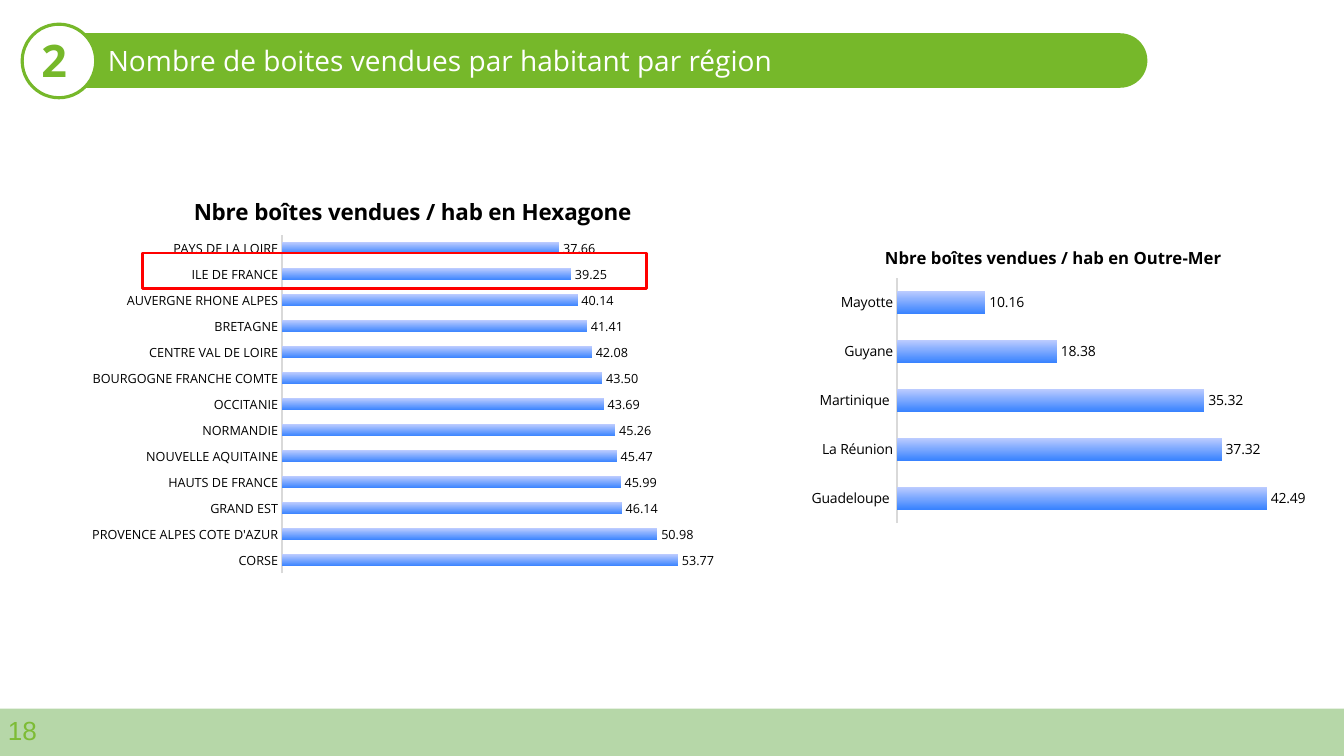
import pptx
import pptx.util
import pptx.dml.color
import pptx.chart.data
import pptx.enum.chart
import pptx.enum.shapes
import pptx.enum.text
import pptx.oxml
import pptx.oxml.ns

RGB = pptx.dml.color.RGBColor
GREEN = RGB(0x76, 0xB8, 0x2A)
PALE = RGB(0xB6, 0xD7, 0xA8)
LIME = RGB(0x7D, 0xBC, 0x35)
WHITE = RGB(0xFF, 0xFF, 0xFF)
BLACK = RGB(0, 0, 0)
GREY = RGB(0xD9, 0xD9, 0xD9)
RED = RGB(0xFF, 0, 0)
BLUE = RGB(0x37, 0x82, 0xFF)
SKY = RGB(0xBB, 0xCB, 0xFF)
FONT = "Open Sans"
PX = 9144
KIND = pptx.enum.shapes.MSO_SHAPE
ANCHOR = pptx.enum.text.MSO_ANCHOR

MAINLAND = [
    ("CORSE", 53.77), ("PROVENCE ALPES COTE D'AZUR", 50.98),
    ("GRAND EST", 46.14), ("HAUTS DE FRANCE", 45.99),
    ("NOUVELLE AQUITAINE", 45.47), ("NORMANDIE", 45.26),
    ("OCCITANIE", 43.69), ("BOURGOGNE FRANCHE COMTE", 43.5),
    ("CENTRE VAL DE LOIRE", 42.08), ("BRETAGNE", 41.41),
    ("AUVERGNE RHONE ALPES", 40.14), ("ILE DE FRANCE", 39.25),
    ("PAYS DE LA LOIRE", 37.66),
]
OVERSEAS = [
    ("Guadeloupe ", 42.49), ("La Réunion", 37.32),
    ("Martinique ", 35.32), ("Guyane", 18.38), ("Mayotte", 10.16),
]


def scale(*box):
    return [round(n * PX) for n in box]


def style(font, size, color, bold=False, name=FONT):
    font.size = pptx.util.Pt(size)
    font.color.rgb = color
    font.bold = bold
    font.name = name


def shape(slide, kind, box, fill=None, line=None, width=0):
    item = slide.shapes.add_shape(kind, *scale(*box))
    item.shadow.inherit = False
    if fill is None:
        item.fill.background()
    else:
        item.fill.solid()
        item.fill.fore_color.rgb = fill
    if line is None:
        item.line.fill.background()
    else:
        item.line.color.rgb = line
        item.line.width = pptx.util.Pt(width)
    return item


def label(slide, box, text, size, color, inset=13, bold=False,
          name=FONT, anchor=ANCHOR.TOP):
    frame = slide.shapes.add_textbox(*scale(*box)).text_frame
    frame.word_wrap = True
    frame.vertical_anchor = anchor
    if inset:
        frame.margin_left = frame.margin_right = inset * PX
        frame.margin_top = frame.margin_bottom = inset * PX
    para = frame.paragraphs[0]
    para.text = text
    style(para.font, size, color, bold, name)


def header(slide, left, top, number, title):
    bar = shape(slide, KIND.ROUNDED_RECTANGLE,
                (left + 18, top + 10, 1097, 52), GREEN, GREEN, 1.5)
    bar.adjustments[0] = 0.5
    shape(slide, KIND.OVAL, (left, top, 73, 73), WHITE, GREEN, 2.25)
    label(slide, (left + 6, top - 5, 81, 71), number, 32, GREEN, bold=True)
    label(slide, (left + 72, top + 10, 1064, 52), title, 20, WHITE,
          anchor=ANCHOR.MIDDLE)


def footer(slide, left, top, width, page):
    shape(slide, KIND.RECTANGLE, (left, top, width, 47), PALE)
    label(slide, (left - 2, top + 1, 57, 43), page, 18.7, LIME,
          inset=0, name="Arial")


def place(node, index, **parts):
    for old in node.findall(pptx.oxml.ns.qn("c:layout")):
        node.remove(old)
    body = "".join(f'<c:{key} val="{val}"/>' for key, val in parts.items())
    node.insert(index, pptx.oxml.parse_xml(
        f'<c:layout {pptx.oxml.ns.nsdecls("c")}>'
        f'<c:manualLayout>{body}</c:manualLayout></c:layout>'))


def bars(slide, box, title, rows, top, sizes, form, head, plot):
    big, small = sizes
    data = pptx.chart.data.CategoryChartData()
    data.categories = [name for name, value in rows]
    data.add_series("Series 1", [value for name, value in rows])
    chart = slide.shapes.add_chart(
        pptx.enum.chart.XL_CHART_TYPE.BAR_CLUSTERED, *scale(*box), data).chart
    style(chart.font, 10, BLACK)
    chart.has_legend = False
    chart.has_title = True
    para = chart.chart_title.text_frame.paragraphs[0]
    para.text = title
    style(para.font, big, BLACK, True)

    axis = chart.category_axis
    axis.major_tick_mark = pptx.enum.chart.XL_TICK_MARK.NONE
    axis.format.line.color.rgb = GREY
    axis.format.line.width = pptx.util.Pt(1)
    style(axis.tick_labels.font, small, BLACK)
    scope = chart.value_axis
    scope.has_major_gridlines = False
    scope.minimum_scale, scope.maximum_scale = 0, top
    scope.tick_labels.number_format = form
    scope.tick_labels.number_format_is_linked = False
    scope.visible = False

    group = chart.plots[0]
    group.vary_by_categories = False
    group.gap_width, group.overlap = 115, -20
    fill = group.series[0].format.fill
    fill.gradient()
    fill.gradient_angle = 90
    for stop, color in zip(fill.gradient_stops, (BLUE, SKY)):
        stop.color.rgb = color
    group.has_data_labels = True
    marks = group.data_labels
    marks.show_value = True
    marks.position = pptx.enum.chart.XL_LABEL_POSITION.OUTSIDE_END
    marks.number_format = form
    marks.number_format_is_linked = False
    style(marks.font, small, BLACK)

    qn = pptx.oxml.ns.qn
    root = chart.element.find(qn("c:chart"))
    place(root.find(qn("c:title")), 1, xMode="edge", yMode="edge",
          x=head[0], y=head[1])
    place(root.find(qn("c:plotArea")), 0, layoutTarget="inner",
          xMode="edge", yMode="edge",
          x=plot[0], y=plot[1], w=plot[2], h=plot[3])


def main():
    deck = pptx.Presentation()
    deck.slide_width, deck.slide_height = scale(1333, 750)
    slide = deck.slides.add_slide(deck.slide_layouts[6])
    footer(slide, 0, 703, 1333, "18")
    header(slide, 22, 24, "2",
           "Nombre de boites vendues par habitant par région")
    bars(slide, (795, 225, 500, 300), "Nbre boîtes vendues / hab en Outre-Mer",
         OVERSEAS, 45, (12, 10), "0.00", (0.16, 0.05), (0.19, 0.17, 0.78, 0.81))
    bars(slide, (77, 173, 654, 404), "Nbre boîtes vendues / hab en Hexagone",
         MAINLAND, 60, (16, 9), "#,##0.00", (0.17, 0.04),
         (0.31, 0.15, 0.67, 0.83))
    shape(slide, KIND.RECTANGLE, (141, 251, 500, 35), line=RED, width=2)
    deck.save("out.pptx")


if __name__ == "__main__":
    main()
